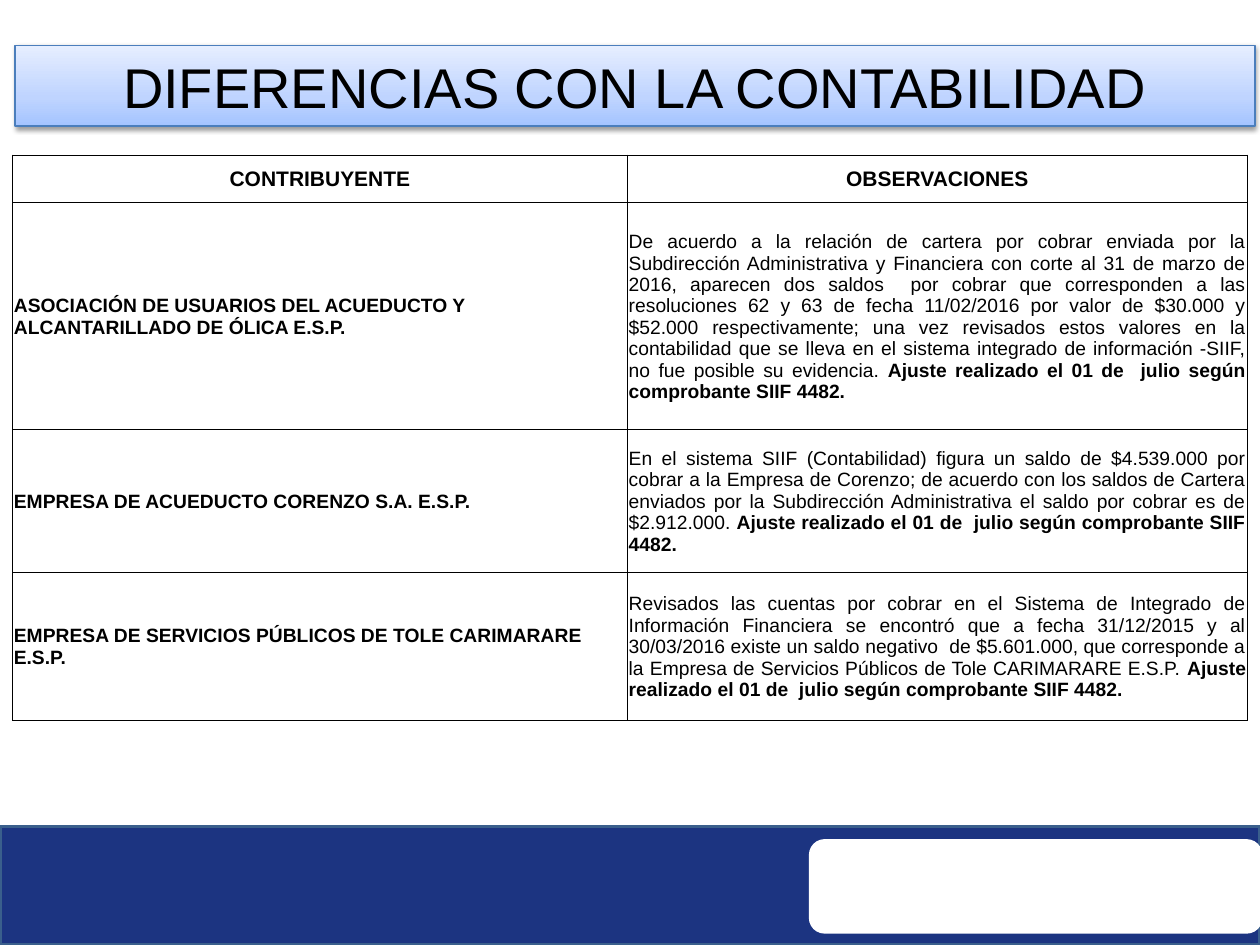
from lxml import etree
from pptx import Presentation
from pptx.dml.color import RGBColor
from pptx.enum.shapes import MSO_SHAPE
from pptx.enum.text import MSO_ANCHOR, MSO_AUTO_SIZE, PP_ALIGN
from pptx.oxml.ns import qn
from pptx.util import Inches, Pt

RECT, ROUND = MSO_SHAPE.RECTANGLE, MSO_SHAPE.ROUNDED_RECTANGLE
LEFT, CENTER, JUSTIFY = PP_ALIGN.LEFT, PP_ALIGN.CENTER, PP_ALIGN.JUSTIFY
MIDDLE = MSO_ANCHOR.MIDDLE
GROW = MSO_AUTO_SIZE.SHAPE_TO_FIT_TEXT

BLACK = RGBColor(0x00, 0x00, 0x00)
WHITE = RGBColor(0xFF, 0xFF, 0xFF)
NAVY = RGBColor(0x1C, 0x34, 0x81)
STEEL = RGBColor(0x3A, 0x5F, 0x8C)
BLUE = RGBColor(0x4B, 0x7E, 0xBC)
BANNER_STOPS = [
    (0, RGBColor(0xA4, 0xC4, 0xFF)),
    (35, RGBColor(0xBF, 0xD4, 0xFF)),
    (100, RGBColor(0xE6, 0xEE, 0xFF)),
]

FONT = "Arial"
COL_WIDTHS = [4.88, 4.92]
ROW_HEIGHTS = [0.38, 1.8, 1.13, 1.18]
HEADERS = ["CONTRIBUYENTE", "OBSERVACIONES"]
ADJUSTMENT = "Ajuste realizado el 01 de  julio según comprobante SIIF 4482."
ROWS = [
    (
        "ASOCIACIÓN DE USUARIOS DEL ACUEDUCTO Y ALCANTARILLADO DE ÓLICA E.S.P.",
        "De acuerdo a la relación de cartera por cobrar enviada por la "
        "Subdirección Administrativa y Financiera con corte al 31 de marzo de "
        "2016, aparecen dos saldos  por cobrar que corresponden a las "
        "resoluciones 62 y 63 de fecha 11/02/2016 por valor de $30.000 y "
        "$52.000 respectivamente; una vez revisados estos valores en la "
        "contabilidad que se lleva en el sistema integrado de información "
        "-SIIF, no fue posible su evidencia. ",
    ),
    (
        "EMPRESA DE ACUEDUCTO CORENZO S.A. E.S.P.",
        "En el sistema SIIF (Contabilidad) figura un saldo de $4.539.000 por "
        "cobrar a la Empresa de Corenzo; de acuerdo con los saldos de Cartera "
        "enviados por la Subdirección Administrativa el saldo por cobrar es de "
        "$2.912.000. ",
    ),
    (
        "EMPRESA DE SERVICIOS PÚBLICOS DE TOLE CARIMARARE E.S.P.",
        "Revisados las cuentas por cobrar en el Sistema de Integrado de "
        "Información Financiera se encontró que a fecha 31/12/2015 y al "
        "30/03/2016 existe un saldo negativo  de $5.601.000, que corresponde a "
        "la Empresa de Servicios Públicos de Tole CARIMARARE E.S.P. ",
    ),
]


def add_text(p, text, size=11, bold=False, align=LEFT):
    """Append a formatted run to a paragraph."""
    p.alignment = align
    r = p.add_run()
    r.text = text
    r.font.name = FONT
    r.font.size = Pt(size)
    r.font.bold = bold
    r.font.color.rgb = BLACK


def add_box(s, kind, x, y, w, h, fill=None, line=None, width=1):
    """Add a preset shape without shadow."""
    sp = s.shapes.add_shape(kind, Inches(x), Inches(y), Inches(w), Inches(h))
    if fill is not None:
        sp.fill.solid()
        sp.fill.fore_color.rgb = fill
    if line is None:
        sp.line.fill.background()
    else:
        sp.line.color.rgb = line
        sp.line.width = Pt(width)
    sp.shadow.inherit = False
    return sp


def add_color(parent, color, alpha=None):
    """Append an RGB colour element, optionally with an opacity percentage."""
    clr = etree.SubElement(parent, qn("a:srgbClr"), val=str(color))
    if alpha is not None:
        etree.SubElement(clr, qn("a:alpha"), val=str(alpha * 1000))


def set_gradient(sp, stops, angle):
    """Fill a shape with a linear gradient of any number of stops."""
    sp.fill.gradient()
    sp.fill.gradient_angle = angle
    gs_list = sp._element.spPr.find(qn("a:gradFill")).find(qn("a:gsLst"))
    for gs in list(gs_list):
        gs_list.remove(gs)
    for pos, color in stops:
        add_color(etree.SubElement(gs_list, qn("a:gs"), pos=str(pos * 1000)), color)


def set_shadow(sp, blur, dist, alpha):
    """Give a shape a soft black shadow that falls straight down."""
    effects = sp._element.spPr.find(qn("a:effectLst"))
    shadow = etree.SubElement(
        effects, qn("a:outerShdw"), blurRad=str(Pt(blur)), dist=str(Pt(dist)),
        dir="5400000", rotWithShape="0",
    )
    add_color(shadow, BLACK, alpha)


def add_banner(s, text):
    """Add the title banner."""
    sp = add_box(s, RECT, 0.12, 0.36, 9.84, 0.64, line=BLUE, width=0.75)
    set_gradient(sp, BANNER_STOPS, 90)
    set_shadow(sp, 3.1, 1.6, 38)
    tf = sp.text_frame
    tf.word_wrap = True
    tf.auto_size = GROW
    add_text(tf.paragraphs[0], text, size=32, align=CENTER)


def style_cell(cell):
    """Set thin black borders, tight margins and no fill on a cell."""
    tc_pr = cell._tc.get_or_add_tcPr()
    for side in ("lnL", "lnR", "lnT", "lnB"):
        ln = etree.SubElement(tc_pr, qn(f"a:{side}"), w=str(Pt(0.5)))
        add_color(etree.SubElement(ln, qn("a:solidFill")), BLACK)
    cell.fill.background()
    cell.vertical_anchor = MIDDLE
    cell.margin_left = cell.margin_right = cell.margin_top = Inches(0.01)
    cell.margin_bottom = 0


def add_observations(s):
    """Add the table of taxpayers and observations."""
    frame = s.shapes.add_table(
        len(ROW_HEIGHTS), len(COL_WIDTHS), Inches(0.1), Inches(1.23),
        Inches(sum(COL_WIDTHS)), Inches(sum(ROW_HEIGHTS)),
    )
    table = frame.table
    table.first_row = table.horz_banding = False
    for col, width in zip(table.columns, COL_WIDTHS):
        col.width = Inches(width)
    for row, height in zip(table.rows, ROW_HEIGHTS):
        row.height = Inches(height)
    for cell in table.iter_cells():
        style_cell(cell)
    for i, header in enumerate(HEADERS):
        p = table.cell(0, i).text_frame.paragraphs[0]
        add_text(p, header, size=12, bold=True, align=CENTER)
    for i, (name, note) in enumerate(ROWS, start=1):
        add_text(table.cell(i, 0).text_frame.paragraphs[0], name, bold=True)
        p = table.cell(i, 1).text_frame.paragraphs[0]
        add_text(p, note, align=JUSTIFY)
        add_text(p, ADJUSTMENT, bold=True, align=JUSTIFY)


def main():
    """Build the slide and save it."""
    prs = Presentation()
    prs.slide_width, prs.slide_height = Inches(10), Inches(7.5)
    s = prs.slides.add_slide(prs.slide_layouts[6])
    add_box(s, RECT, 0, 6.56, 10, 0.94, fill=NAVY, line=STEEL, width=2)
    add_box(s, ROUND, 6.42, 6.66, 3.6, 0.75, fill=WHITE)
    add_banner(s, "DIFERENCIAS CON LA CONTABILIDAD")
    add_observations(s)
    prs.save("out.pptx")


if __name__ == "__main__":
    main()
